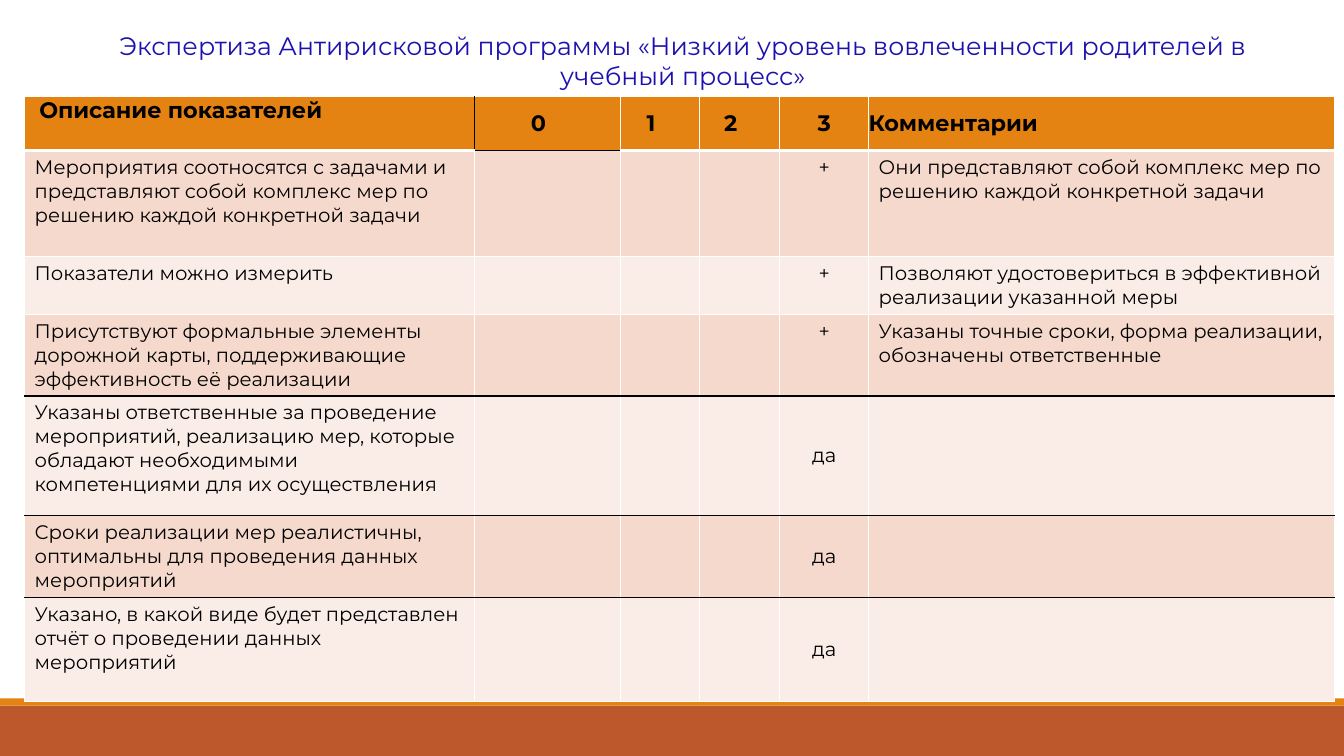
from dataclasses import dataclass

from lxml import etree
from pptx import Presentation
from pptx.dml.color import RGBColor
from pptx.enum.shapes import MSO_SHAPE
from pptx.enum.text import MSO_ANCHOR, PP_ALIGN
from pptx.oxml.ns import qn
from pptx.util import Cm, Pt

RECT = MSO_SHAPE.RECTANGLE
TOP, MIDDLE = MSO_ANCHOR.TOP, MSO_ANCHOR.MIDDLE
LEFT, CENTER = PP_ALIGN.LEFT, PP_ALIGN.CENTER


@dataclass(frozen=True)
class Theme:
    font: str = "Montserrat"
    title: str = "1C11AF"
    text: str = "000000"
    line: str = "FFFFFF"
    dark_line: str = "000000"
    orange: str = "E48312"
    rust: str = "BD582C"
    bands: tuple = ("FAEDE7", "F5D9CC")
    title_size: int = 18
    header_size: int = 16
    body_size: int = 14


THEME = Theme()
TITLE = "Экспертиза Антирисковой программы «Низкий уровень вовлеченности родителей в учебный процесс»"
COL_WIDTHS = (11.34, 3.67, 2, 2.02, 2.24, 11.74)
ROW_HEIGHTS = (1.35, 2.67, 1.46, 2.02, 3.02, 2.03, 2.62)
SCORE_COL = 4
HEADER = ("Описание показателей", "0", "1", "2", "3", "Комментарии")
CRITERIA = (
    ("Мероприятия соотносятся с задачами и представляют собой комплекс мер по решению каждой конкретной задачи",
     "+", "Они представляют собой комплекс мер по решению каждой конкретной задачи"),
    ("Показатели можно измерить",
     "+", "Позволяют удостовериться в эффективной реализации указанной меры"),
    ("Присутствуют формальные элементы дорожной карты, поддерживающие эффективность её реализации",
     "+", "Указаны точные сроки, форма реализации, обозначены ответственные"),
    ("Указаны ответственные за проведение мероприятий, реализацию мер, которые обладают необходимыми "
     "компетенциями для их осуществления", "да", ""),
    ("Сроки реализации мер реалистичны, оптимальны для проведения данных мероприятий", "да", ""),
    ("Указано, в какой виде будет представлен отчёт о проведении данных мероприятий", "да", ""),
)


def write(tf, text, size, color, align, bold=False):
    p = tf.paragraphs[0]
    p.text = text
    p.alignment = align
    p.font.name = THEME.font
    p.font.size = Pt(size)
    p.font.bold = bold
    p.font.color.rgb = RGBColor.from_string(color)


def add_bar(s, top, height, color):
    sp = s.shapes.add_shape(RECT, 0, Cm(top), Cm(33.87), Cm(height))
    sp.shadow.inherit = False
    sp.fill.solid()
    sp.fill.fore_color.rgb = RGBColor.from_string(color)
    sp.line.fill.background()


def add_title(s):
    tf = s.shapes.add_textbox(Cm(1.65), Cm(0.64), Cm(31.12), Cm(1.8)).text_frame
    tf.word_wrap = True
    write(tf, TITLE, THEME.title_size, THEME.title, CENTER)


def set_borders(cell, edges):
    tc_pr = cell._tc.get_or_add_tcPr()
    for side in "LRTB":
        color, width = edges.get(side, (THEME.line, 1))
        ln = etree.SubElement(tc_pr, qn(f"a:ln{side}"), w=str(Pt(width)))
        fill = etree.SubElement(ln, qn("a:solidFill"))
        etree.SubElement(fill, qn("a:srgbClr"), val=color)


def cell_edges(row, col):
    dark = (THEME.dark_line, 1)
    edges = {}
    if row == 0:
        edges["B"] = dark if col == 1 else (THEME.line, 3)
        if col < 2:
            edges["RL"[col]] = dark
    elif row == 1:
        edges["T"] = dark if col == 1 else (THEME.line, 3)
    elif row >= 4:
        edges["T"] = dark
    if 3 <= row < len(CRITERIA):
        edges["B"] = dark
    return edges


def style_cell(cell, row, col, text):
    header = row == 0
    set_borders(cell, cell_edges(row, col))
    cell.fill.solid()
    cell.fill.fore_color.rgb = RGBColor.from_string(THEME.orange if header else THEME.bands[row % 2])
    cell.vertical_anchor = TOP
    if (header and col > 0) or text == "да":
        cell.vertical_anchor = MIDDLE
    if header or text == "да":
        cell.margin_left = cell.margin_right = cell.margin_top = cell.margin_bottom = 0
    if header and col == 0:
        cell.margin_left = Cm(0.37)
    if header and col in (1, 2, 3):
        cell.margin_right = Cm(0.45)
    size = THEME.header_size if header else THEME.body_size
    align = CENTER if 0 < col <= SCORE_COL else LEFT
    write(cell.text_frame, text, size, THEME.text, align, header)


def add_criteria_table(s):
    rows = [HEADER] + [(name, "", "", "", mark, note) for name, mark, note in CRITERIA]
    table = s.shapes.add_table(len(rows), len(HEADER), Cm(0.62), Cm(2.44),
                               Cm(sum(COL_WIDTHS)), Cm(sum(ROW_HEIGHTS))).table
    for column, width in zip(table.columns, COL_WIDTHS):
        column.width = Cm(width)
    for row, height in zip(table.rows, ROW_HEIGHTS):
        row.height = Cm(height)
    for r, texts in enumerate(rows):
        for c, text in enumerate(texts):
            style_cell(table.cell(r, c), r, c, text)


def main():
    prs = Presentation()
    prs.slide_width, prs.slide_height = Cm(33.87), Cm(19.05)
    s = prs.slides.add_slide(prs.slide_layouts[6])
    add_bar(s, 17.78, 1.27, THEME.rust)
    add_bar(s, 17.6, 0.18, THEME.orange)
    add_criteria_table(s)
    add_title(s)
    prs.save("out.pptx")


if __name__ == "__main__":
    main()
